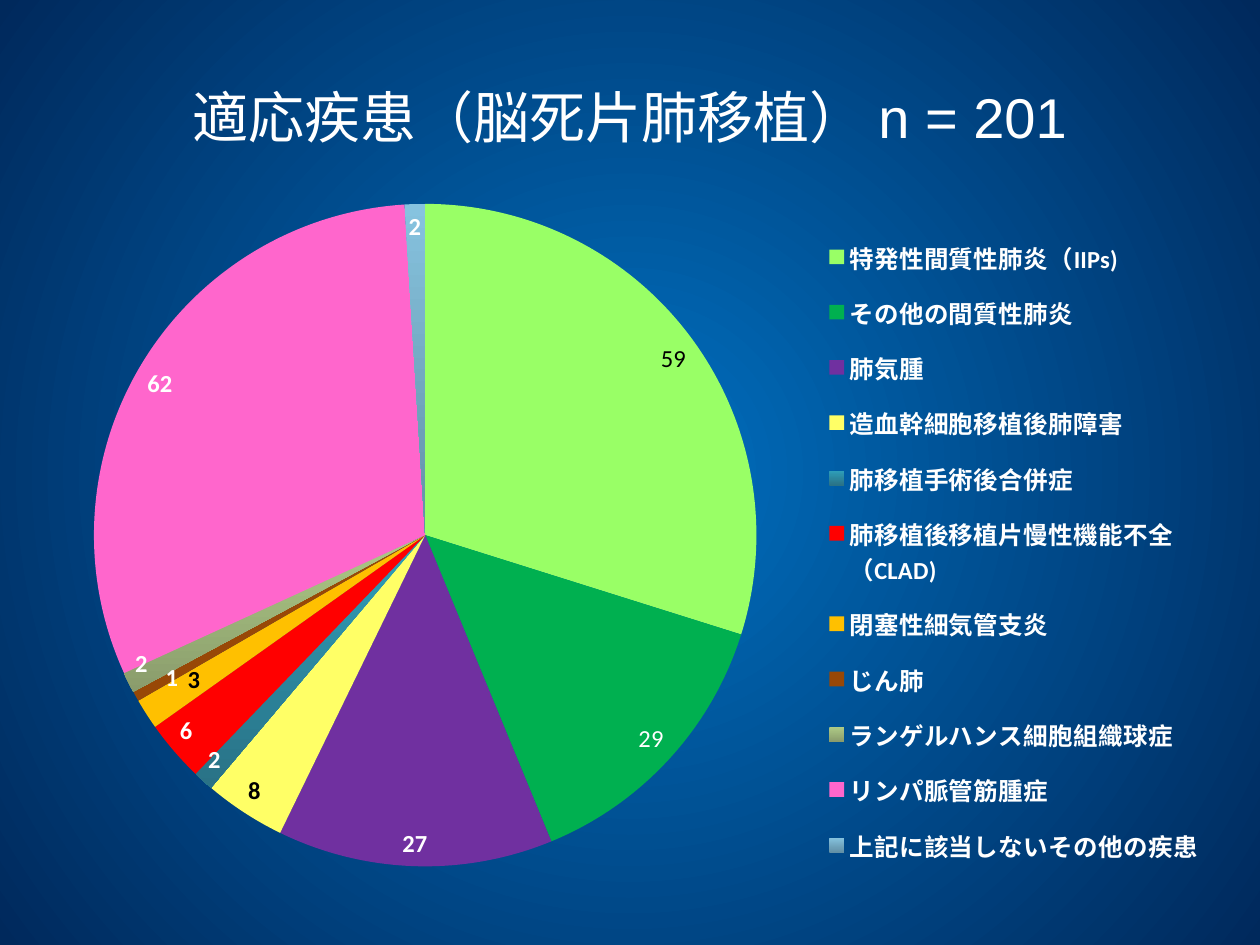
from pptx import Presentation
from pptx.chart.data import CategoryChartData
from pptx.dml.color import RGBColor
from pptx.enum.chart import XL_CHART_TYPE as ChartType, XL_LABEL_POSITION as LabelPosition, XL_LEGEND_POSITION as LegendPosition
from pptx.enum.text import MSO_ANCHOR, PP_ALIGN
from pptx.oxml import parse_xml
from pptx.oxml.ns import nsdecls, qn
from pptx.util import Inches, Pt

WHITE = RGBColor(255, 255, 255)
BLACK = RGBColor(0, 0, 0)
BACKGROUND = (RGBColor(0x00, 0x70, 0xC0), RGBColor(0x00, 0x29, 0x5C))
LIME = RGBColor(0x99, 0xFF, 0x66)
GREEN = RGBColor(0x00, 0xB0, 0x50)
PURPLE = RGBColor(0x70, 0x30, 0xA0)
YELLOW = RGBColor(0xFF, 0xFF, 0x66)
TEAL = (RGBColor(0x2E, 0x9F, 0xBA), RGBColor(0x2A, 0x72, 0x86))
RED = RGBColor(0xFF, 0x00, 0x00)
AMBER = RGBColor(0xFF, 0xC0, 0x00)
BROWN = RGBColor(0x98, 0x48, 0x07)
OLIVE = (RGBColor(0xAE, 0xCB, 0x86), RGBColor(0x8A, 0x9C, 0x6C))
PINK = RGBColor(0xFF, 0x66, 0xCC)
SKY = (RGBColor(0x86, 0xC3, 0xDF), RGBColor(0x62, 0x90, 0xA6))

TITLE = "適応疾患（脳死片肺移植） n = 201"
DISEASES = [
    ("特発性間質性肺炎（IIPs)", 60, LIME, BLACK),
    ("その他の間質性肺炎", 28, GREEN, WHITE),
    ("肺気腫", 27, PURPLE, WHITE),
    ("造血幹細胞移植後肺障害", 8, YELLOW, BLACK),
    ("肺移植手術後合併症", 2, TEAL, WHITE),
    ("肺移植後移植片慢性機能不全（CLAD)", 6, RED, WHITE),
    ("閉塞性細気管支炎", 3, AMBER, BLACK),
    ("じん肺", 1, BROWN, WHITE),
    ("ランゲルハンス細胞組織球症", 2, OLIVE, WHITE),
    ("リンパ脈管筋腫症", 62, PINK, WHITE),
    ("上記に該当しないその他の疾患", 2, SKY, WHITE),
]
LABEL_TEXTS = {0: "59", 1: "29"}
LABEL_SHIFTS = {6: (0.03, -0.02), 7: (0.02, 0)}
PLOT_AREA = (0.034, 0.039, 0.566, 0.899)
LEGEND_AREA = (0.65, 0.06, 0.34, 0.9)


def set_gradient(fill, colors):
    fill.gradient()
    for stop, position, color in zip(fill.gradient_stops, (0, 1), colors):
        stop.position = position
        stop.color.rgb = color


def set_background(slide):
    set_gradient(slide.background.fill, BACKGROUND)
    linear = next(slide.element.iter(qn("a:lin")))
    linear.getparent().replace(linear, parse_xml(
        f'<a:path {nsdecls("a")} path="circle">'
        '<a:fillToRect l="50000" t="50000" r="50000" b="50000"/></a:path>'))


def set_layout(parent, index, values, inner=False):
    for old in parent.findall(qn("c:layout")):
        parent.remove(old)
    names = ("x", "y", "w", "h")[:len(values)]
    target = '<c:layoutTarget val="inner"/>' if inner else ""
    modes = "".join(f'<c:{name}Mode val="edge"/>' for name in "xy") if len(values) == 4 else ""
    sizes = "".join(f'<c:{name} val="{value}"/>' for name, value in zip(names, values))
    parent.insert(index, parse_xml(
        f'<c:layout {nsdecls("c")}><c:manualLayout>{target}{modes}{sizes}'
        '</c:manualLayout></c:layout>'))


def set_font(font, size, color, bold):
    font.name = "Calibri"
    font.size = Pt(size)
    font.bold = bold
    font.color.rgb = color


def format_point(point, index, fill_color, label_color):
    fill = point.format.fill
    if isinstance(fill_color, RGBColor):
        fill.solid()
        fill.fore_color.rgb = fill_color
    else:
        set_gradient(fill, fill_color)
        fill.gradient_angle = 270
    point.format.line.fill.background()
    label = point.data_label
    if index in LABEL_TEXTS:
        run = label.text_frame.paragraphs[0].add_run()
        run.text = LABEL_TEXTS[index]
        set_font(run.font, 14, label_color, False)
    else:
        set_font(label.font, 14, label_color, True)
    label.position = LabelPosition.INSIDE_END


def add_title(slide):
    title = slide.shapes.title
    title.left, title.top, title.width, title.height = map(Inches, (0.5, 0.3, 9, 1.25))
    title.text_frame.vertical_anchor = MSO_ANCHOR.MIDDLE
    paragraph = title.text_frame.paragraphs[0]
    paragraph.alignment = PP_ALIGN.CENTER
    run = paragraph.add_run()
    run.text = TITLE
    run.font.name = "Arial"
    run.font.size = Pt(32)
    run.font.color.rgb = WHITE


def add_pie(slide):
    data = CategoryChartData()
    data.categories = [disease[0] for disease in DISEASES]
    data.add_series("Series 1", [disease[1] for disease in DISEASES])
    chart = slide.shapes.add_chart(
        ChartType.PIE, *map(Inches, (0.43, 1.39, 9.29, 5.85)), data).chart
    set_font(chart.font, 10, WHITE, False)
    chart.has_title = False
    chart.has_legend = True
    chart.legend.position = LegendPosition.RIGHT
    chart.legend.include_in_layout = False
    set_font(chart.legend.font, 14, WHITE, True)

    plot = chart.plots[0]
    plot.vary_by_categories = True
    series = plot.series[0]
    labels = series.data_labels
    labels.show_value = True
    labels.position = LabelPosition.INSIDE_END
    set_font(labels.font, 14, WHITE, True)
    for index, (_, _, fill_color, label_color) in enumerate(DISEASES):
        format_point(series.points[index], index, fill_color, label_color)

    set_layout(chart.element.find(".//" + qn("c:plotArea")), 0, PLOT_AREA, inner=True)
    set_layout(chart.element.find(".//" + qn("c:legend")), 1, LEGEND_AREA)
    for label in chart.element.iter(qn("c:dLbl")):
        shift = LABEL_SHIFTS.get(int(label.find(qn("c:idx")).get("val")))
        if shift:
            set_layout(label, 1, shift)


def main():
    presentation = Presentation()
    presentation.slide_width = Inches(10)
    presentation.slide_height = Inches(7.5)
    slide = presentation.slides.add_slide(presentation.slide_layouts[5])
    set_background(slide)
    add_title(slide)
    add_pie(slide)
    presentation.save("out.pptx")


if __name__ == "__main__":
    main()
